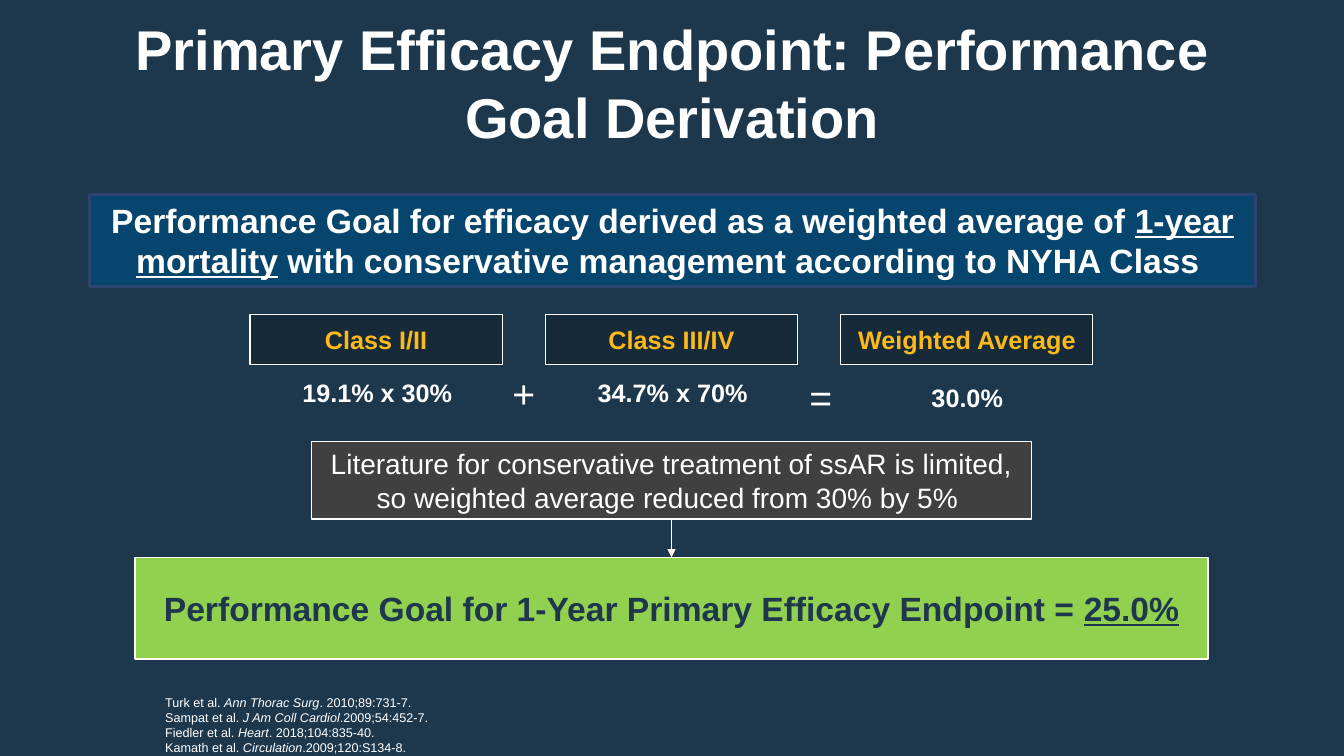
"""Build the slide that derives the primary efficacy performance goal."""
from dataclasses import dataclass

from lxml import etree
from pptx import Presentation
from pptx.dml.color import RGBColor
from pptx.enum.shapes import MSO_CONNECTOR, MSO_SHAPE
from pptx.enum.text import MSO_ANCHOR, PP_ALIGN
from pptx.oxml.ns import qn
from pptx.util import Emu, Pt

RECT = MSO_SHAPE.RECTANGLE
STRAIGHT = MSO_CONNECTOR.STRAIGHT
TOP, MIDDLE = MSO_ANCHOR.TOP, MSO_ANCHOR.MIDDLE
LEFT, CENTER = PP_ALIGN.LEFT, PP_ALIGN.CENTER
PX = 9144
FONT = "Arial"
COLORS = {
    "navy": "1D384C", "white": "FFFFFF", "blue": "05456E", "edge": "2D4370",
    "gray": "404040", "green": "92D050", "dark": "162A39", "amber": "FEB91A",
}


@dataclass(frozen=True)
class Run:
    text: str
    underline: bool = False
    italic: bool = False


@dataclass(frozen=True)
class Box:
    x: int
    y: int
    w: int
    h: int
    lines: tuple[tuple[Run, ...], ...]
    size: int
    color: str = "white"
    bold: bool = False
    align: PP_ALIGN = CENTER
    anchor: MSO_ANCHOR = TOP
    margins: tuple[int, int] = (10, 5)
    wrap: bool = True
    indent: int = 0
    fill: str = ""
    line: str = "white"
    line_width: float = 1


@dataclass(frozen=True)
class Column:
    header: str
    value: str
    value_dx: int
    value_y: int
    value_w: int


@dataclass(frozen=True)
class Reference:
    authors: str
    journal: str
    citation: str


COLUMN_X, COLUMN_STEP = 248, 293
COLUMNS = (
    Column("Class I/II", "19.1% x 30%", 42, 369, 170),
    Column("Class III/IV", "34.7% x 70%", 42, 369, 170),
    Column("Weighted Average", "30.0%", 80, 374, 92),
)
REFERENCES = (
    Reference("Turk et al. ", "Ann Thorac Surg", ". 2010;89:731-7."),
    Reference("Sampat et al. ", "J Am Coll Cardiol", ".2009;54:452-7."),
    Reference("Fiedler et al. ", "Heart", ". 2018;104:835-40."),
    Reference("Kamath et al. ", "Circulation", ".2009;120:S134-8."),
)
TITLE = Box(100, 10, 1133, 83, ((Run("Primary Efficacy Endpoint: Performance Goal Derivation"),),),
            40, bold=True, margins=(5, 5))
BASIS = Box(89, 193, 1156, 91, ((
    Run("Performance Goal for efficacy derived as a weighted average of "),
    Run("1-year mortality", underline=True),
    Run(" with conservative management according to NYHA Class ")),),
    24, bold=True, fill="blue", line="edge", line_width=2.25)
REDUCTION = Box(309, 438, 714, 77, ((
    Run("Literature for conservative treatment of ssAR is limited, "
        "so weighted average reduced from 30% by 5% "),),), 20, fill="gray")
GOAL = Box(134, 553, 1064, 101, ((
    Run("Performance Goal for 1-Year Primary Efficacy Endpoint = "),
    Run("25.0%", underline=True)),),
    24, "navy", bold=True, margins=(20, 30), fill="green")
OPERATORS = (
    Box(498, 361, 43, 57, ((Run("+"),),), 28),
    Box(793, 365, 42, 57, ((Run("="),),), 28),
)
SOURCES = Box(147, 684, 667, 71, tuple(
    (Run(ref.authors), Run(ref.journal, italic=True), Run(ref.citation)) for ref in REFERENCES),
    9, align=LEFT, indent=7)


def px(n: int) -> Emu:
    """Convert px to EMU."""
    return Emu(n * PX)


def rgb(name: str) -> RGBColor:
    """Look up a palette colour."""
    return RGBColor.from_string(COLORS[name])


def draw_box(s, box: Box):
    """Draw a text box, or a rectangle when the box has a fill."""
    frame = [px(n) for n in (box.x, box.y, box.w, box.h)]
    if box.fill:
        sp = s.shapes.add_shape(RECT, *frame)
        sp.shadow.inherit = False
        sp.fill.solid()
        sp.fill.fore_color.rgb = rgb(box.fill)
        sp.line.color.rgb = rgb(box.line)
        sp.line.width = Pt(box.line_width)
    else:
        sp = s.shapes.add_textbox(*frame)
    tf = sp.text_frame
    tf.word_wrap = box.wrap
    tf.vertical_anchor = box.anchor
    tf.margin_left = tf.margin_right = px(box.margins[0])
    tf.margin_top = tf.margin_bottom = px(box.margins[1])
    for i, runs in enumerate(box.lines):
        p = tf.add_paragraph() if i else tf.paragraphs[0]
        p.alignment = box.align
        if box.indent:
            p._p.get_or_add_pPr().set("marL", str(px(box.indent)))
        for run in runs:
            r = p.add_run()
            r.text = run.text
            r.font.name = FONT
            r.font.size = Pt(box.size)
            r.font.bold = box.bold
            r.font.italic = run.italic
            r.font.underline = run.underline
            r.font.color.rgb = rgb(box.color)
    return sp


def draw_column(s, x: int, column: Column) -> None:
    """Draw a class header with its value below."""
    draw_box(s, Box(x, 312, 250, 50, ((Run(column.header),),), 18, "amber",
                    bold=True, anchor=MIDDLE, fill="dark", line_width=0.75))
    draw_box(s, Box(x + column.value_dx, column.value_y, column.value_w, 40,
                    ((Run(column.value),),), 18, bold=True, align=LEFT, wrap=False))


def draw_arrow(s, start, end) -> None:
    """Join the bottom of one rectangle to the top of another."""
    arrow = s.shapes.add_connector(STRAIGHT, 0, 0, 0, 0)
    arrow.begin_connect(start, 2)
    arrow.end_connect(end, 0)
    arrow.line.color.rgb = rgb("white")
    arrow.line.width = Pt(1)
    etree.SubElement(arrow.line._get_or_add_ln(), qn("a:tailEnd"), type="triangle")
    etree.SubElement(arrow._element.spPr, qn("a:effectLst"))


def main() -> None:
    """Build and save the slide."""
    prs = Presentation()
    prs.slide_width, prs.slide_height = px(1333), px(750)
    s = prs.slides.add_slide(prs.slide_layouts[6])
    s.background.fill.solid()
    s.background.fill.fore_color.rgb = rgb("navy")
    draw_box(s, TITLE)
    draw_box(s, BASIS)
    reduction = draw_box(s, REDUCTION)
    goal = draw_box(s, GOAL)
    draw_arrow(s, reduction, goal)
    for i, column in enumerate(COLUMNS):
        draw_column(s, COLUMN_X + i * COLUMN_STEP, column)
    for box in (*OPERATORS, SOURCES):
        draw_box(s, box)
    prs.save("out.pptx")


if __name__ == "__main__":
    main()
